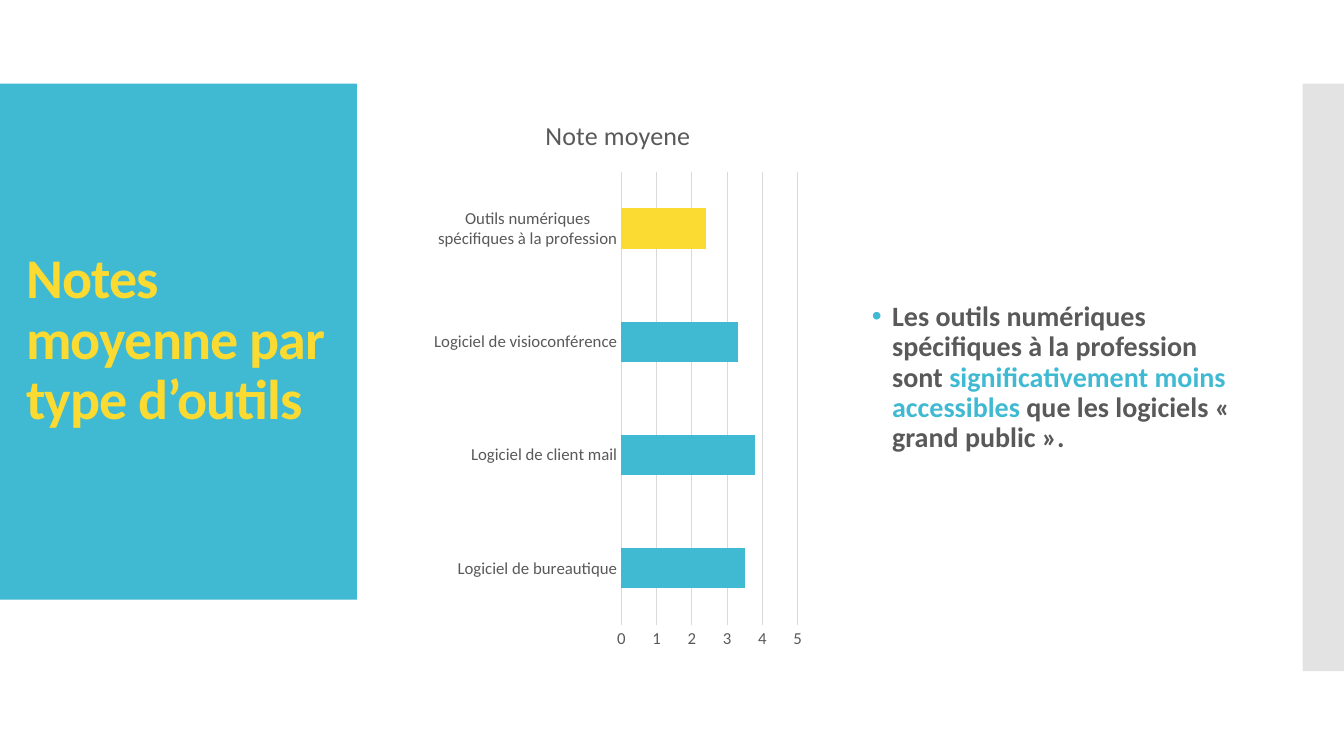
import pptx
import pptx.util
import pptx.dml.color
import pptx.chart.data
import pptx.enum.chart
import pptx.enum.shapes
import pptx.enum.text
import pptx.oxml
import pptx.oxml.ns

Inches = pptx.util.Inches
Pt = pptx.util.Pt
RGBColor = pptx.dml.color.RGBColor
qn = pptx.oxml.ns.qn

TEAL = RGBColor(0x40, 0xBA, 0xD2)
YELLOW = RGBColor(0xFB, 0xDA, 0x32)
SILVER = RGBColor(0xC8, 0xC8, 0xC8)
GRID = RGBColor(0xD9, 0xD9, 0xD9)
TEXT = RGBColor(0x59, 0x59, 0x59)

NOTES = {
    "Logiciel de bureautique": 3.5,
    "Logiciel de client mail": 3.8,
    "Logiciel de visioconférence": 3.3,
    "Outils numériques spécifiques à la profession": 2.4,
}


def apply(target, values):
    for name, value in values.items():
        setattr(target, name, value)


class Deck:
    font = "Calibri"

    def __init__(self, slide):
        self.slide = slide

    def style(self, font, size, color, bold=False):
        apply(font, {"name": self.font, "size": Pt(size), "bold": bold})
        font.color.rgb = color

    def panel(self, box, color, alpha=None):
        shape = self.slide.shapes.add_shape(
            pptx.enum.shapes.MSO_SHAPE.RECTANGLE, *map(Inches, box))
        shape.shadow.inherit = False
        shape.fill.solid()
        shape.fill.fore_color.rgb = color
        shape.line.fill.background()
        if alpha is not None:
            tint = shape.fill._xPr.find(".//" + qn("a:srgbClr"))
            tint.makeelement(qn("a:alpha"))
            node = pptx.oxml.parse_xml(
                f'<a:alpha {pptx.oxml.ns.nsdecls("a")} val="{alpha * 1000}"/>')
            tint.append(node)

    def text(self, box, runs, size, track=None, before=0):
        frame = self.slide.shapes.add_textbox(*map(Inches, box)).text_frame
        apply(frame, {"word_wrap": True,
                      "vertical_anchor": pptx.enum.text.MSO_ANCHOR.MIDDLE})
        para = frame.paragraphs[0]
        apply(para, {"line_spacing": 0.9, "space_before": Pt(before)})
        for words, color in runs:
            run = para.add_run()
            run.text = words
            self.style(run.font, size, color, True)
            if track is not None:
                run._r.get_or_add_rPr().set("spc", str(track))
        return para

    def bullet(self, para, color, indent):
        props = para._p.get_or_add_pPr()
        props.set("marL", str(Inches(indent)))
        props.set("indent", str(Inches(-indent)))
        names = pptx.oxml.ns.nsdecls("a")
        for xml in (f'<a:buClr {names}><a:srgbClr val="{color}"/></a:buClr>',
                    f'<a:buFont {names} typeface="Arial"/>',
                    f'<a:buChar {names} char="•"/>'):
            props.append(pptx.oxml.parse_xml(xml))

    def bars(self, box, title, notes, marked):
        data = pptx.chart.data.CategoryChartData()
        data.categories = list(notes)
        data.add_series(title, list(notes.values()))
        chart = self.slide.shapes.add_chart(
            pptx.enum.chart.XL_CHART_TYPE.BAR_CLUSTERED,
            *map(Inches, box), data).chart
        chart.has_legend = False
        chart.font.name = self.font
        chart.font.size = Pt(10)

        # Chart title
        chart.has_title = True
        chart.chart_title.include_in_layout = False
        frame = chart.chart_title.text_frame
        frame.text = title
        self.style(frame.paragraphs[0].runs[0].font, 18.6, TEXT)

        # Bars, one of them marked
        plot = chart.plots[0]
        apply(plot, {"gap_width": 182, "vary_by_categories": False})
        series = plot.series[0]
        point = series.points[list(notes).index(marked)]
        for part, color in ((series, TEAL), (point, YELLOW)):
            part.format.fill.solid()
            part.format.fill.fore_color.rgb = color

        # Axes
        cats, vals = chart.category_axis, chart.value_axis
        none = pptx.enum.chart.XL_TICK_MARK.NONE
        for axis in (cats, vals):
            apply(axis, {"major_tick_mark": none, "minor_tick_mark": none})
            self.style(axis.tick_labels.font, 12, TEXT)
        apply(vals, {"minimum_scale": 0, "maximum_scale": 5,
                     "major_unit": 1, "has_major_gridlines": True})
        vals.format.line.fill.background()
        for line in (cats.format.line, vals.major_gridlines.format.line):
            line.color.rgb = GRID
            line.width = Pt(0.75)


def main():
    show = pptx.Presentation()
    apply(show, {"slide_width": Inches(13.33), "slide_height": Inches(7.5)})
    deck = Deck(show.slides.add_slide(show.slide_layouts[6]))

    # Side panels
    deck.panel((0, 0.83, 3.54, 5.12), TEAL)
    deck.panel((12.92, 0.83, 0.41, 5.83), SILVER, alpha=50)

    # Title
    deck.text((0.16, 0.87, 3.22, 5.03),
              [("Notes moyenne par type d’outils", YELLOW)], 40, track=-60)

    # Chart
    deck.bars((4.23, 0.95, 3.8, 5.6), "Note moyene", NOTES,
              "Outils numériques spécifiques à la profession")

    # Finding
    para = deck.text((8.55, 0.95, 3.8, 5.6), [
        ("Les outils numériques spécifiques à la profession sont ", TEXT),
        ("significativement moins accessibles ", TEAL),
        ("que les logiciels « grand public ».", TEXT),
    ], 20, before=12)
    deck.bullet(para, TEAL, 0.2)

    show.save("out.pptx")


if __name__ == "__main__":
    main()
